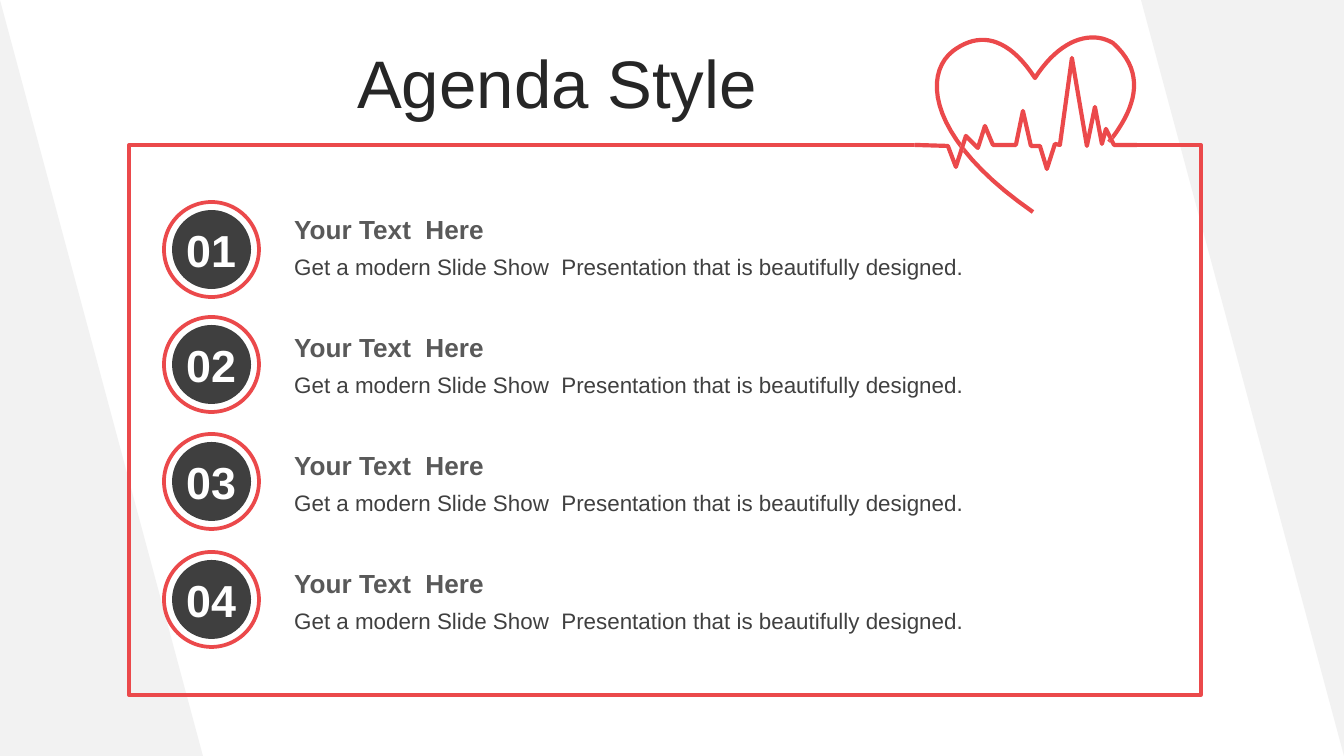
"""Build an agenda slide with four numbered items and a heartbeat emblem."""
from pptx import Presentation
from pptx.dml.color import RGBColor
from pptx.enum.shapes import MSO_SHAPE
from pptx.enum.text import MSO_ANCHOR
from pptx.util import Pt

PX = 914400 / 134.4
COLORS = {
    "white": "FFFFFF", "panel": "F2F2F2", "red": "EB494B", "disc": "3F3F3F",
    "title": "262626", "heading": "595959", "body": "404040",
}


def style(shape, fill=None, line=None, width=2):
    shape.shadow.inherit = False
    if fill:
        shape.fill.solid()
        shape.fill.fore_color.rgb = RGBColor.from_string(COLORS[fill])
    else:
        shape.fill.background()
    if line:
        shape.line.color.rgb = RGBColor.from_string(COLORS[line])
        shape.line.width = Pt(width)
    else:
        shape.line.fill.background()


def add_text(box, text, size, color, bold=False, wrap=True, anchor=MSO_ANCHOR.TOP):
    left, top, width, height = [round(value * PX) for value in box]
    frame = slide.shapes.add_textbox(left, top, width, height).text_frame
    frame.word_wrap = wrap
    frame.vertical_anchor = anchor
    run = frame.paragraphs[0].add_run()
    run.text = text
    run.font.name = "Arial"
    run.font.size = Pt(size)
    run.font.bold = bold
    run.font.color.rgb = RGBColor.from_string(COLORS[color])


presentation = Presentation()
presentation.slide_width = round(1344 * PX)
presentation.slide_height = round(756 * PX)
slide = presentation.slides.add_slide(presentation.slide_layouts[6])

background = [
    (MSO_SHAPE.RIGHT_TRIANGLE, (1141, 0, 203, 756), 180, "panel", None),
    (MSO_SHAPE.RIGHT_TRIANGLE, (0, 0, 203, 756), 0, "panel", None),
    (MSO_SHAPE.RECTANGLE, (129, 145, 1072, 550), 0, None, "red"),
    (MSO_SHAPE.RECTANGLE, (915, 38, 222, 175), 0, "white", None),
]
for kind, box, rotation, fill, line in background:
    shape = slide.shapes.add_shape(kind, *[round(value * PX) for value in box])
    shape.rotation = rotation
    style(shape, fill, line)

heart_curves = [
    [(1033, 212), (929, 140), (922, 75), (953, 51)],
    [(953, 51), (978, 32), (1007, 35), (1035, 78)],
    [(1035, 78), (1060, 39), (1091, 30), (1113, 43)],
    [(1113, 43), (1149, 75), (1133, 112), (1109, 142)],
]
steps = 20
heart = [heart_curves[0][0]]
for curve in heart_curves:
    for step in range(1, steps + 1):
        t = step / steps
        weights = ((1 - t) ** 3, 3 * t * (1 - t) ** 2, 3 * t ** 2 * (1 - t), t ** 3)
        heart.append([sum(w * point[axis] for w, point in zip(weights, curve)) for axis in (0, 1)])

pulse = [
    (915, 145), (948, 146), (956, 167), (966, 136), (978, 148), (985, 126), (993, 145),
    (1016, 145), (1023, 111), (1031, 146), (1040, 146), (1047, 169), (1055, 144), (1060, 145),
    (1072, 58), (1087, 146), (1095, 107), (1102, 144), (1106, 129), (1114, 145), (1137, 145),
]
for points, color in [(heart, "red"), (pulse, "white"), (pulse, "red")]:
    vertices = [(x * PX, y * PX) for x, y in points]
    builder = slide.shapes.build_freeform(*vertices[0])
    builder.add_line_segments(vertices[1:], close=False)
    style(builder.convert_to_shape(), None, color, 2.25)

add_text((344, 39, 1000, 85), "Agenda Style", 36, "title", anchor=MSO_ANCHOR.MIDDLE)

for row, circle_top in enumerate((202, 317, 434, 552)):
    text_top = 207 + 118 * row
    add_text((281, text_top, 530, 46), "Your Text  Here", 14, "heading", bold=True)
    add_text((281, text_top + 40, 888, 40),
             "Get a modern Slide Show  Presentation that is beautifully designed.", 12, "body")
    for inset, fill, line in [(0, "white", "red"), (8, "disc", None)]:
        size = round((95 - 2 * inset) * PX)
        circle = slide.shapes.add_shape(
            MSO_SHAPE.OVAL, round((164 + inset) * PX), round((circle_top + inset) * PX), size, size)
        style(circle, fill, line)
    add_text((173, circle_top + 14, 78, 67), f"{row + 1:02}", 24, "white", bold=True, wrap=False)

presentation.save("out.pptx")
